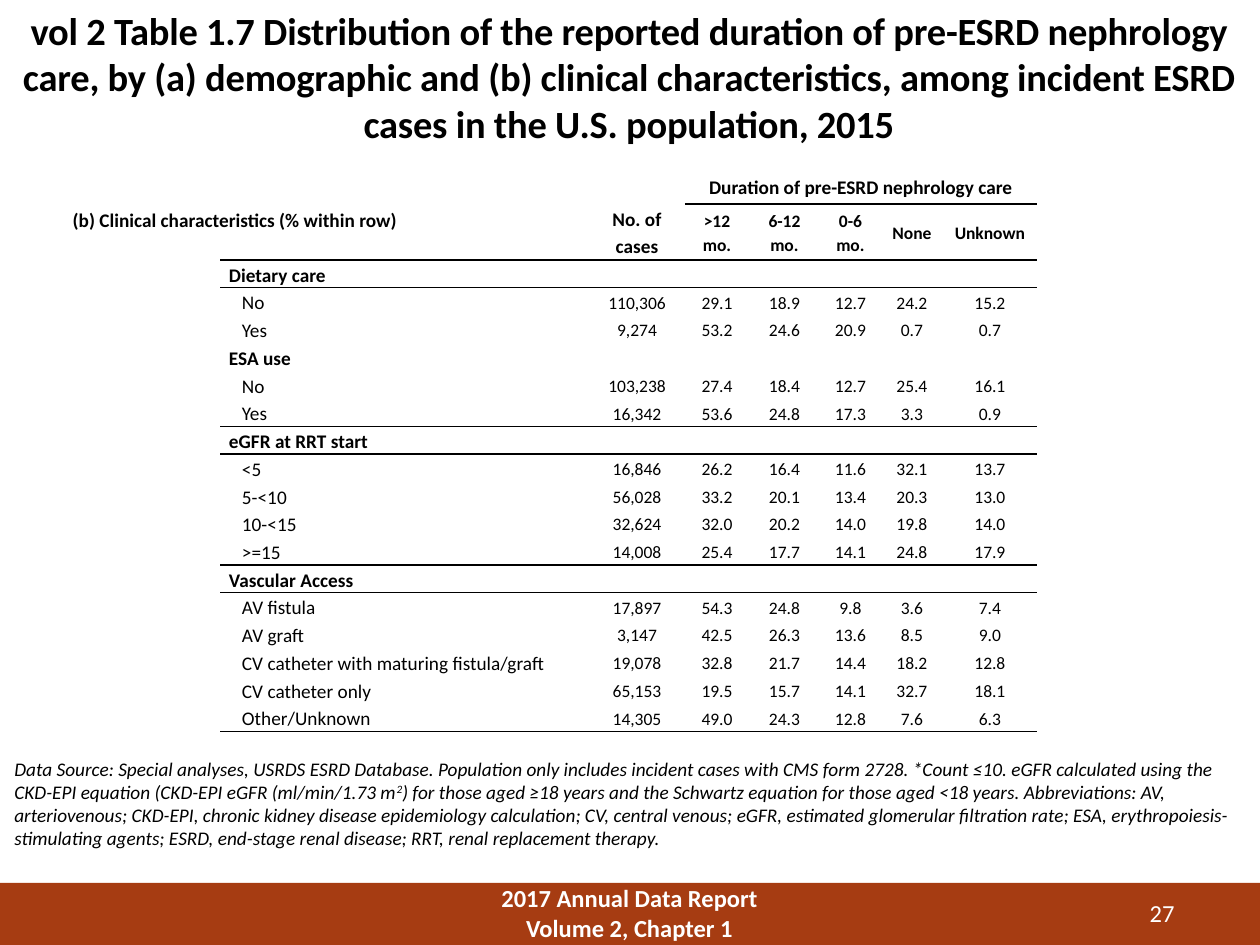
from dataclasses import dataclass

from lxml import etree
from pptx import Presentation
from pptx import util as u
from pptx.dml.color import RGBColor
from pptx.enum import shapes, text
from pptx.oxml.ns import qn

PX = u.Inches(1) / 126
NO_STYLE = "{2D5ABB26-0587-4C30-8999-92F81FD0307C}"


@dataclass(frozen=True)
class Theme:
    font: str = "Calibri"
    ink: str = "000000"
    paper: str = "FFFFFF"
    band: str = "A63C12"
    title: int = 22
    footer: int = 14
    label: int = 11
    value: int = 10
    rule: int = 1


THEME = Theme()
LEFT, CENTER, RIGHT = text.PP_ALIGN.LEFT, text.PP_ALIGN.CENTER, text.PP_ALIGN.RIGHT

TITLE = ("vol 2 Table 1.7 Distribution of the reported duration of pre-ESRD nephrology care, "
         "by (a) demographic and (b) clinical characteristics, among incident ESRD cases "
         "in the U.S. population, 2015")
SECTION = "(b) Clinical characteristics (% within row)"
SOURCE_START = ("Data Source: Special analyses, USRDS ESRD Database. Population only includes "
                "incident cases with CMS form 2728. *Count ≤10. eGFR calculated using the "
                "CKD-EPI equation (CKD-EPI eGFR (ml/min/1.73 m")
SOURCE_END = (") for those aged ≥18 years and the Schwartz equation for those aged <18 years. "
              "Abbreviations: AV, arteriovenous; CKD-EPI, chronic kidney disease epidemiology "
              "calculation; CV, central venous; eGFR, estimated glomerular filtration rate; "
              "ESA, erythropoiesis-stimulating agents; ESRD, end-stage renal disease; "
              "RRT, renal replacement therapy.")

SPANNER = "Duration of pre-ESRD nephrology care"
HEADINGS = ["No. of cases", ">12 mo.", "6-12 mo.", "0-6 mo.", "None", "Unknown"]
COLUMNS = [369, 96, 64, 71, 61, 62, 94]
HEADER_ROWS = [36, 56]

# Each group: heading, whether a rule closes it, and its rows
GROUPS = [
    ("Dietary care", False, [
        ("No", "110,306", 29.1, 18.9, 12.7, 24.2, 15.2),
        ("Yes", "9,274", 53.2, 24.6, 20.9, 0.7, 0.7)]),
    ("ESA use", True, [
        ("No", "103,238", 27.4, 18.4, 12.7, 25.4, 16.1),
        ("Yes", "16,342", 53.6, 24.8, 17.3, 3.3, 0.9)]),
    ("eGFR at RRT start", True, [
        ("<5", "16,846", 26.2, 16.4, 11.6, 32.1, 13.7),
        ("5-<10", "56,028", 33.2, 20.1, 13.4, 20.3, 13.0),
        ("10-<15", "32,624", 32.0, 20.2, 14.0, 19.8, 14.0),
        (">=15", "14,008", 25.4, 17.7, 14.1, 24.8, 17.9)]),
    ("Vascular Access", True, [
        ("AV fistula", "17,897", 54.3, 24.8, 9.8, 3.6, 7.4),
        ("AV graft", "3,147", 42.5, 26.3, 13.6, 8.5, 9.0),
        ("CV catheter with maturing fistula/graft", "19,078", 32.8, 21.7, 14.4, 18.2, 12.8),
        ("CV catheter only", "65,153", 19.5, 15.7, 14.1, 32.7, 18.1),
        ("Other/Unknown", "14,305", 49.0, 24.3, 12.8, 7.6, 6.3)]),
]


def px(length):
    return u.Emu(round(length * PX))


def box_emu(box):
    return [px(length) for length in box]


def write(paragraph, words, *, size, color=THEME.ink, bold=False, italic=False,
          align=LEFT, line=None, tracking=None, baseline=None):
    """Add one formatted run to the paragraph."""
    paragraph.alignment = align
    if line:
        paragraph.line_spacing = line
    run = paragraph.add_run()
    run.text = words
    font = run.font
    font.name, font.size, font.bold, font.italic = THEME.font, u.Pt(size), bold, italic
    font.color.rgb = RGBColor.from_string(color)
    for name, value in (("spc", tracking), ("baseline", baseline)):
        if value is not None:
            font._element.set(name, str(value))


def text_frame(slide, box, wrap=True):
    frame = slide.shapes.add_textbox(*box_emu(box)).text_frame
    frame.word_wrap = wrap
    return frame


def add_title(slide, box):
    title = slide.shapes.title
    title.left, title.top, title.width, title.height = box_emu(box)
    frame = title.text_frame
    frame.word_wrap = True
    frame.auto_size = text.MSO_AUTO_SIZE.NONE
    frame.vertical_anchor = text.MSO_ANCHOR.TOP
    write(frame.paragraphs[0], TITLE, size=THEME.title, bold=True, align=CENTER, tracking=-10)


def add_footer(slide, box):
    left, top, width, height = box
    band = slide.shapes.add_shape(shapes.MSO_SHAPE.RECTANGLE, *box_emu(box))
    band.shadow.inherit = False
    band.fill.solid()
    band.fill.fore_color.rgb = RGBColor.from_string(THEME.band)
    band.line.fill.background()
    style = dict(size=THEME.footer, color=THEME.paper)
    report = text_frame(slide, (left + 451, top - 6, 357, 42))
    write(report.paragraphs[0], "2017 Annual Data Report", bold=True, align=CENTER, **style)
    write(report.add_paragraph(), "Volume 2, Chapter 1", bold=True, align=CENTER, **style)
    page_number = text_frame(slide, (left + 1061, top + 9, 126, 38))
    write(page_number.paragraphs[0], "27", align=RIGHT, **style)


def add_source_note(slide, box):
    note = text_frame(slide, box).paragraphs[0]
    for words, baseline in ((SOURCE_START, None), ("2", 30000), (SOURCE_END, None)):
        write(note, words, size=THEME.label, italic=True, baseline=baseline)


def add_section_label(slide, box):
    label = text_frame(slide, box, wrap=False).paragraphs[0]
    write(label, SECTION, size=THEME.label, bold=True, align=CENTER, line=1.15)


def add_rule(cell, side):
    rule = etree.SubElement(cell._tc.get_or_add_tcPr(), qn(f"a:{side}"), w=str(u.Pt(THEME.rule)))
    fill = etree.SubElement(rule, qn("a:solidFill"))
    etree.SubElement(fill, qn("a:srgbClr"), val=THEME.ink)


def format_cell(cell, rule_above, rule_below):
    if rule_above:
        add_rule(cell, "lnT")
    if rule_below:
        add_rule(cell, "lnB")
    cell.fill.background()
    cell.vertical_anchor = text.MSO_ANCHOR.MIDDLE
    cell.margin_left = cell.margin_right = px(9)
    cell.margin_top = cell.margin_bottom = 0
    if not cell.text_frame.text:
        # An empty cell must not stretch its row
        etree.SubElement(cell.text_frame.paragraphs[0]._p, qn("a:endParaRPr"),
                         sz=str(THEME.value * 100))


def add_care_table(slide, box):
    body_count = sum(1 + len(rows) for _, _, rows in GROUPS)
    row_count = len(HEADER_ROWS) + body_count
    table = slide.shapes.add_table(row_count, len(COLUMNS), *box_emu(box)).table
    table.first_row = table.horz_banding = False
    table._tbl.tblPr.find(qn("a:tableStyleId")).text = NO_STYLE
    body_height = (box[3] - sum(HEADER_ROWS)) / body_count
    for column, width in zip(table.columns, COLUMNS):
        column.width = px(width)
    for row, height in zip(table.rows, HEADER_ROWS + [body_height] * body_count):
        row.height = px(height)

    def fill_cell(row, column, words, **style):
        paragraph = table.cell(row, column).text_frame.paragraphs[0]
        write(paragraph, words, line=1.15, **style)
        return paragraph

    table.cell(0, 2).merge(table.cell(0, 6))
    fill_cell(0, 2, SPANNER, size=THEME.label, bold=True, align=CENTER)
    for column, heading in enumerate(HEADINGS, 1):
        size = THEME.label if column == 1 else THEME.value
        fill_cell(1, column, heading, size=size, bold=True, align=CENTER)

    ruled_rows = {1}
    row = len(HEADER_ROWS)
    for heading, closed, entries in GROUPS:
        fill_cell(row, 0, heading, size=THEME.label, bold=True)
        for row, (name, *values) in enumerate(entries, row + 1):
            label = fill_cell(row, 0, name, size=THEME.label)
            label._p.get_or_add_pPr().set("marL", str(px(13)))
            for column, value in enumerate(values, 1):
                fill_cell(row, column, str(value), size=THEME.value, align=CENTER)
        if closed:
            ruled_rows.add(row)
        row += 1

    def is_ruled(row, column):
        return row in ruled_rows or (row == 0 and column >= 2)

    for row in range(row_count):
        for column in range(len(COLUMNS)):
            format_cell(table.cell(row, column), is_ruled(row - 1, column), is_ruled(row, column))


def main():
    deck = Presentation()
    deck.slide_width, deck.slide_height = px(1260), px(945)
    slide = deck.slides.add_slide(deck.slide_layouts[5])
    add_footer(slide, (0, 883, 1260, 63))
    add_title(slide, (-1, 1, 1260, 146))
    add_source_note(slide, (2, 751, 1260, 106))
    add_section_label(slide, (58, 199, 354, 39))
    add_care_table(slide, (220, 168, 817, 564))
    deck.save("out.pptx")


if __name__ == "__main__":
    main()
